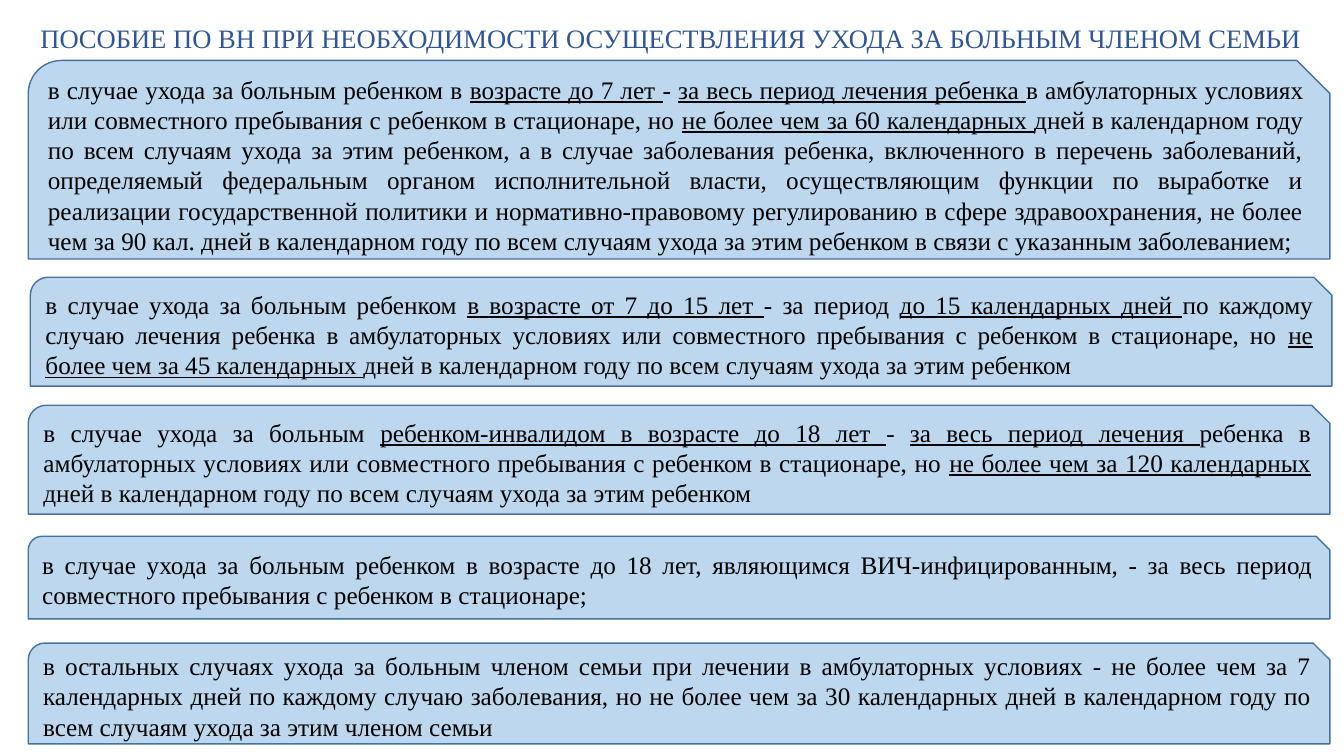
from pptx import Presentation
from pptx.dml.color import RGBColor
from pptx.enum.shapes import MSO_SHAPE as Preset
from pptx.enum.text import MSO_ANCHOR as Anchor, MSO_AUTO_SIZE as AutoSize, PP_ALIGN as Align
from pptx.util import Inches, Pt

HEADING = "ПОСОБИЕ ПО ВН ПРИ НЕОБХОДИМОСТИ ОСУЩЕСТВЛЕНИЯ УХОДА ЗА БОЛЬНЫМ ЧЛЕНОМ СЕМЬИ"
CARD_WIDTH = 12.91
UNDERLINE_MARK = "|"

CARE_CASES = [
    (0.28, 0.6, 1.97,
     "в случае ухода за больным ребенком в |возрасте до 7 лет |- "
     "|за весь период лечения ребенка |в амбулаторных условиях или совместного "
     "пребывания с ребенком в стационаре, но |не более чем за 60 календарных |дней "
     "в календарном году по всем случаям ухода за этим ребенком, а в случае "
     "заболевания ребенка, включенного в перечень заболеваний, определяемый "
     "федеральным органом исполнительной власти, осуществляющим функции по "
     "выработке и реализации государственной политики и нормативно-правовому "
     "регулированию в сфере здравоохранения, не более чем за 90 кал. дней в "
     "календарном году по всем случаям ухода за этим ребенком в связи с указанным "
     "заболеванием;"),
    (0.3, 2.75, 1.08,
     "в случае ухода за больным ребенком |в возрасте от 7 до 15 лет |- за период "
     "|до 15 календарных дней |по каждому случаю лечения ребенка в амбулаторных "
     "условиях или совместного пребывания с ребенком в стационаре, но "
     "|не более чем за 45 календарных |дней в календарном году по всем случаям "
     "ухода за этим ребенком"),
    (0.28, 4.02, 1.08,
     "в случае ухода за больным |ребенком-инвалидом в возрасте до 18 лет |- "
     "|за весь период лечения |ребенка в амбулаторных условиях или совместного "
     "пребывания с ребенком в стационаре, но |не более чем за 120 календарных "
     "|дней в календарном году по всем случаям ухода за этим ребенком"),
    (0.28, 5.32, 0.82,
     "в случае ухода за больным ребенком в возрасте до 18 лет, являющимся "
     "ВИЧ-инфицированным, - за весь период совместного пребывания с ребенком в "
     "стационаре;"),
    (0.28, 6.38, 1,
     "в остальных случаях ухода за больным членом семьи при лечении в амбулаторных "
     "условиях - не более чем за 7 календарных дней по каждому случаю заболевания, "
     "но не более чем за 30 календарных дней в календарном году по всем случаям "
     "ухода за этим членом семьи"),
]


def color(hex_value):
    """Turn a hex string into a colour."""
    return RGBColor.from_string(hex_value)


def apply_format(target, values):
    """Set each attribute named in values on the target."""
    for attribute, value in values.items():
        setattr(target, attribute, value)


def add_phrase(paragraph, wording, size, hex_value, underline=False):
    """Append one formatted run to the paragraph."""
    phrase = paragraph.add_run()
    phrase.text = wording
    apply_format(phrase.font, {"name": "Times New Roman", "size": Pt(size),
                               "underline": underline})
    phrase.font.color.rgb = color(hex_value)


def set_heading(slide):
    """Place and format the slide title."""
    heading = slide.shapes.title
    apply_format(heading, {"left": Inches(0.3), "top": Inches(0.17),
                           "width": Inches(13.04), "height": Inches(0.42)})
    apply_format(heading.text_frame, {"word_wrap": True, "vertical_anchor": Anchor.TOP,
                                      "auto_size": AutoSize.SHAPE_TO_FIT_TEXT})
    paragraph = heading.text_frame.paragraphs[0]
    paragraph.alignment = Align.LEFT
    add_phrase(paragraph, HEADING, 19, "2F5597")


def add_care_card(slide, left, top, height, wording):
    """Add one card, underlining every second marked phrase."""
    card = slide.shapes.add_shape(Preset.SNIP_ROUND_RECTANGLE, Inches(left), Inches(top),
                                  Inches(CARD_WIDTH), Inches(height))
    card.shadow.inherit = False
    card.fill.solid()
    card.fill.fore_color.rgb = color("BDD7EE")
    card.line.color.rgb = color("43739E")
    card.line.width = Pt(1)
    apply_format(card.text_frame, {"word_wrap": True, "vertical_anchor": Anchor.MIDDLE})
    paragraph = card.text_frame.paragraphs[0]
    paragraph.alignment = Align.JUSTIFY
    for index, phrase in enumerate(wording.split(UNDERLINE_MARK)):
        add_phrase(paragraph, phrase, 18, "000000", underline=index % 2 == 1)


def main():
    """Build the slide and save it."""
    deck = Presentation()
    apply_format(deck, {"slide_width": Inches(13.33), "slide_height": Inches(7.5)})
    slide = deck.slides.add_slide(deck.slide_layouts[5])
    set_heading(slide)
    for care_case in CARE_CASES:
        add_care_card(slide, *care_case)
    deck.save("out.pptx")


if __name__ == "__main__":
    main()
